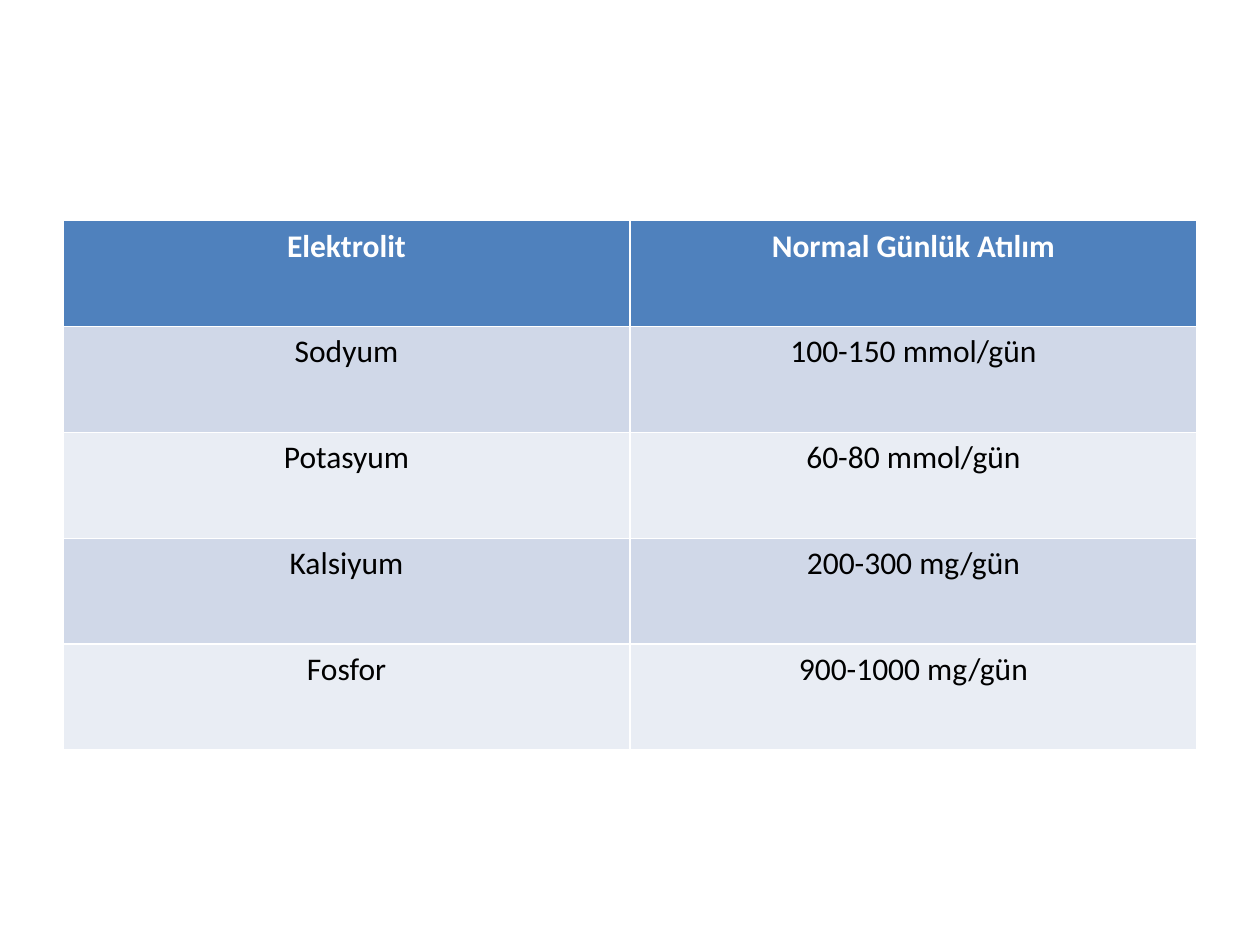
from pptx import Presentation
from pptx.dml.color import RGBColor
from pptx.enum.text import PP_ALIGN
from pptx.util import Cm, Pt

CENTER = PP_ALIGN.CENTER

ROWS = [
    ("Elektrolit", "Normal Günlük Atılım"),
    ("Sodyum", "100-150 mmol/gün"),
    ("Potasyum", "60-80 mmol/gün"),
    ("Kalsiyum", "200-300 mg/gün"),
    ("Fosfor", "900-1000 mg/gün"),
]
COLORS = {
    "header": "4F81BD",
    "odd": "D0D8E8",
    "even": "E9EDF4",
    "header_text": "FFFFFF",
    "text": "000000",
}
FONT = "Calibri"
FONT_SIZE = Pt(18)
LEFT, TOP, WIDTH, HEIGHT = Cm(1.27), Cm(4.45), Cm(22.86), Cm(10.67)


def color(name):
    return RGBColor.from_string(COLORS[name])


def fill_cell(cell, text, row_index):
    is_header = row_index == 0
    band = "header" if is_header else "odd" if row_index % 2 else "even"
    cell.fill.solid()
    cell.fill.fore_color.rgb = color(band)
    cell.text = text
    para = cell.text_frame.paragraphs[0]
    para.alignment = CENTER
    para.font.name = FONT
    para.font.size = FONT_SIZE
    para.font.bold = is_header
    para.font.color.rgb = color("header_text" if is_header else "text")


def main():
    deck = Presentation()
    deck.slide_width, deck.slide_height = Cm(25.4), Cm(19.05)
    page = deck.slides.add_slide(deck.slide_layouts[6])
    table = page.shapes.add_table(
        len(ROWS), len(ROWS[0]), LEFT, TOP, WIDTH, HEIGHT
    ).table
    for row_index, row in enumerate(ROWS):
        for column_index, text in enumerate(row):
            fill_cell(table.cell(row_index, column_index), text, row_index)
    deck.save("out.pptx")


if __name__ == "__main__":
    main()
